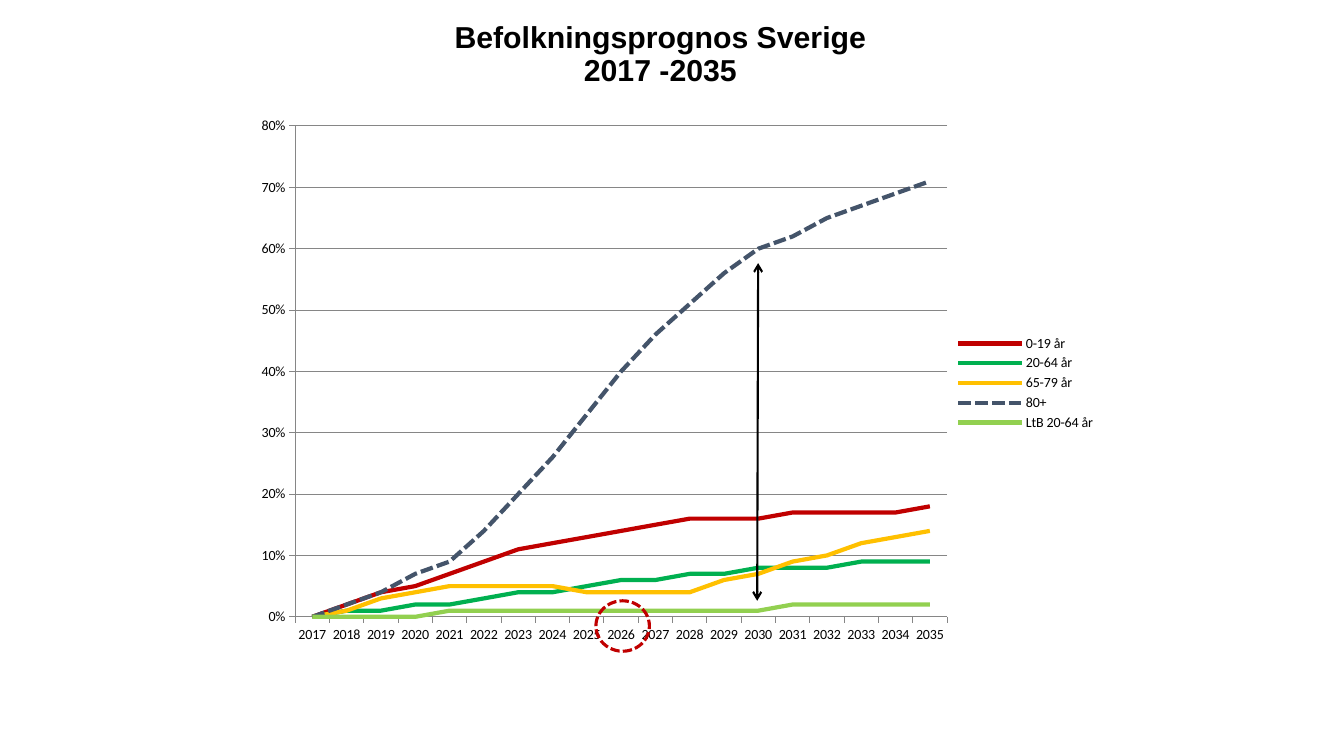
from lxml import etree
from pptx import Presentation
from pptx.chart.data import CategoryChartData
from pptx.dml.color import RGBColor
from pptx.enum.chart import XL_CHART_TYPE, XL_LEGEND_POSITION, XL_MARKER_STYLE, XL_TICK_MARK
from pptx.enum.dml import MSO_LINE
from pptx.enum.shapes import MSO_CONNECTOR, MSO_SHAPE
from pptx.enum.text import MSO_ANCHOR, PP_ALIGN
from pptx.oxml.ns import qn
from pptx.util import Inches, Pt

LINE_CHART = XL_CHART_TYPE.LINE
LEGEND_RIGHT = XL_LEGEND_POSITION.RIGHT
NO_MARKER = XL_MARKER_STYLE.NONE
TICK_OUT, TICK_NONE = XL_TICK_MARK.OUTSIDE, XL_TICK_MARK.NONE
DASH = MSO_LINE.SQUARE_DOT
STRAIGHT = MSO_CONNECTOR.STRAIGHT
ELLIPSE = MSO_SHAPE.OVAL
MIDDLE, CENTER = MSO_ANCHOR.MIDDLE, PP_ALIGN.CENTER

BLACK = RGBColor(0x00, 0x00, 0x00)
GRAY = RGBColor(0x86, 0x86, 0x86)
RED = RGBColor(0xC0, 0x00, 0x00)
GREEN = RGBColor(0x00, 0xB0, 0x50)
YELLOW = RGBColor(0xFF, 0xC0, 0x00)
SLATE = RGBColor(0x44, 0x54, 0x6A)
LIME = RGBColor(0x92, 0xD0, 0x50)

YEARS = [str(year) for year in range(2017, 2036)]
AGE_GROUPS = [
    ("0-19 år", RED, None,
     [0, 2, 4, 5, 7, 9, 11, 12, 13, 14, 15, 16, 16, 16, 17, 17, 17, 17, 18]),
    ("20-64 år", GREEN, None,
     [0, 1, 1, 2, 2, 3, 4, 4, 5, 6, 6, 7, 7, 8, 8, 8, 9, 9, 9]),
    ("65-79 år", YELLOW, None,
     [0, 1, 3, 4, 5, 5, 5, 5, 4, 4, 4, 4, 6, 7, 9, 10, 12, 13, 14]),
    ("80+", SLATE, DASH,
     [0, 2, 4, 7, 9, 14, 20, 26, 33, 40, 46, 51, 56, 60, 62, 65, 67, 69, 71]),
    ("LtB 20-64 år", LIME, None, [0] * 4 + [1] * 10 + [2] * 5),
]


class ForecastSlide:
    """Draws styled elements on one slide, placed in percent of its size."""

    title_font, chart_font = "Arial", "Calibri"
    title_size, chart_size = Pt(21.6), Pt(10)

    def __init__(self, prs):
        self.width, self.height = prs.slide_width, prs.slide_height
        self.s = prs.slides.add_slide(prs.slide_layouts[6])

    def place(self, x, y):
        return int(self.width * x / 100), int(self.height * y / 100)

    def box(self, x, y, w, h):
        return self.place(x, y) + self.place(w, h)

    def stroke(self, line, color, points, dash=None):
        line.color.rgb = color
        line.width = Pt(points)
        if dash:
            line.dash_style = dash

    def title(self, text, *area):
        tf = self.s.shapes.add_textbox(*self.box(*area)).text_frame
        tf.word_wrap = True
        tf.vertical_anchor = MIDDLE
        tf.text = text
        p = tf.paragraphs[0]
        p.alignment = CENTER
        p.line_spacing = 0.9
        for r in p.runs:
            r.font.name, r.font.size = self.title_font, self.title_size
            r.font.bold = True
            r.font.color.rgb = BLACK

    def line_chart(self, categories, groups, plot_area, *area):
        data = CategoryChartData(number_format="0%")
        data.categories = categories
        for name, _, _, percents in groups:
            data.add_series(name, [value / 100 for value in percents])
        chart = self.s.shapes.add_chart(LINE_CHART, *self.box(*area), data).chart
        chart.has_title = False
        chart.font.name, chart.font.size = self.chart_font, self.chart_size
        chart.font.color.rgb = BLACK
        chart.has_legend = True
        chart.legend.position = LEGEND_RIGHT
        chart.legend.include_in_layout = False
        chart.plots[0].vary_by_categories = False
        for series, (_, color, dash, _) in zip(chart.plots[0].series, groups):
            series.smooth = False
            series.marker.style = NO_MARKER
            self.stroke(series.format.line, color, 3, dash)
        for axis in (chart.category_axis, chart.value_axis):
            axis.major_tick_mark, axis.minor_tick_mark = TICK_OUT, TICK_NONE
            self.stroke(axis.format.line, GRAY, 0.75)
        values = chart.value_axis
        values.minimum_scale, values.maximum_scale, values.major_unit = 0, 0.8, 0.1
        values.tick_labels.number_format = "0%"
        values.tick_labels.number_format_is_linked = False
        values.has_major_gridlines = True
        self.stroke(values.major_gridlines.format.line, GRAY, 0.75)
        self.fix_plot(chart, plot_area)

    def fix_plot(self, chart, plot_area):
        plot = chart.element.find(".//" + qn("c:plotArea"))
        for layout in plot.findall(qn("c:layout")):
            plot.remove(layout)
        layout = etree.Element(qn("c:layout"))
        manual = etree.SubElement(layout, qn("c:manualLayout"))
        settings = [("layoutTarget", "inner"), ("xMode", "edge"), ("yMode", "edge")]
        settings += zip("xywh", plot_area)
        for tag, value in settings:
            etree.SubElement(manual, qn("c:" + tag)).set("val", str(value))
        plot.insert(0, layout)

    def ring(self, color, *area):
        shape = self.s.shapes.add_shape(ELLIPSE, *self.box(*area))
        shape.shadow.inherit = False
        shape.fill.background()
        self.stroke(shape.line, color, 2.25, DASH)

    def double_arrow(self, start, end):
        arrow = self.s.shapes.add_connector(STRAIGHT, *self.place(*start), *self.place(*end))
        self.stroke(arrow.line, BLACK, 1.5)
        properties = arrow.element.spPr
        for tag in ("a:headEnd", "a:tailEnd"):
            etree.SubElement(properties.find(qn("a:ln")), qn(tag)).set("type", "arrow")
        etree.SubElement(properties, qn("a:effectLst"))


def main():
    prs = Presentation()
    prs.slide_width, prs.slide_height = Inches(13.33), Inches(7.5)
    slide = ForecastSlide(prs)
    slide.title("Befolkningsprognos Sverige\v2017 -2035", 27.83, 2.4, 42.61, 9.87)
    slide.line_chart(YEARS, AGE_GROUPS, (0.066, 0.033, 0.751, 0.892),
                     17.7, 14.27, 64.59, 72.8)
    slide.ring(RED, 44.34, 79.47, 3.98, 6.67)
    slide.double_arrow((56.41, 34.8), (56.34, 79.47))
    prs.save("out.pptx")


if __name__ == "__main__":
    main()
